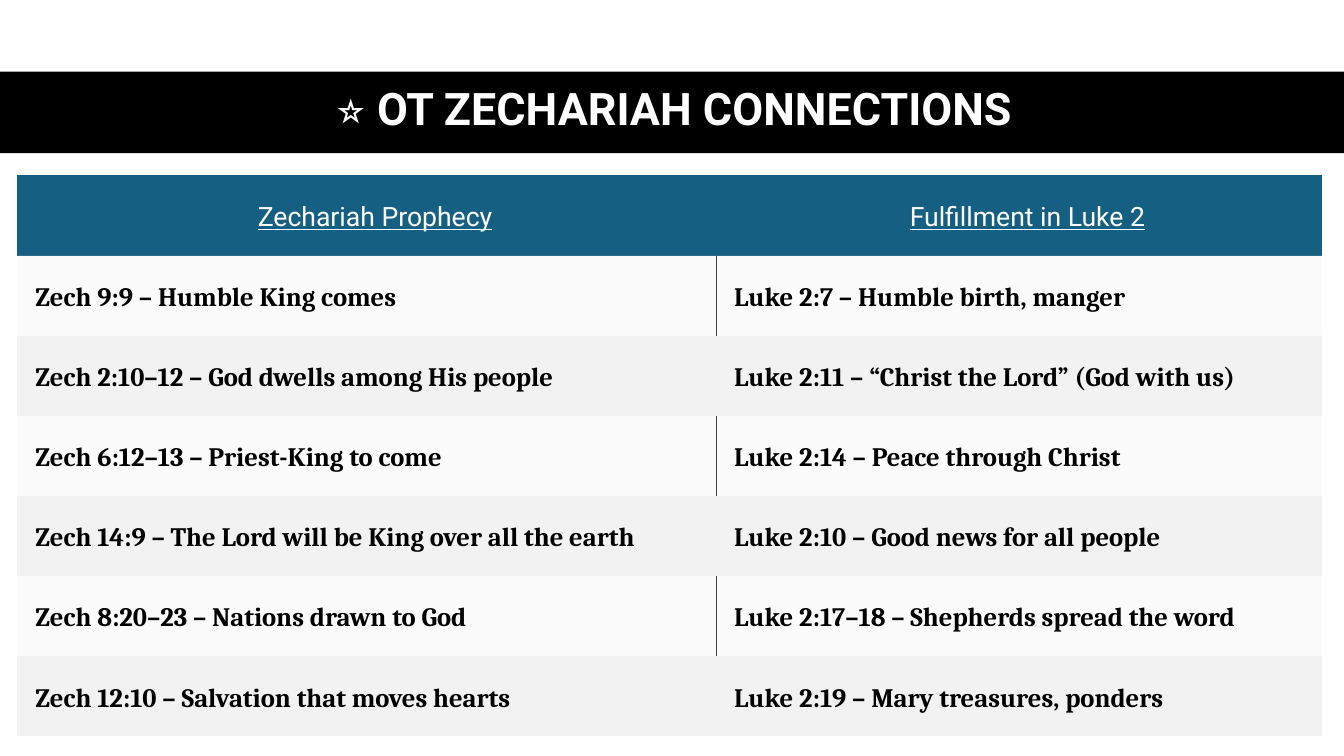
from lxml import etree
from pptx import Presentation
from pptx.dml.color import RGBColor
from pptx.enum.shapes import MSO_SHAPE
from pptx.enum.text import MSO_ANCHOR, MSO_AUTO_SIZE, PP_ALIGN
from pptx.oxml import parse_xml
from pptx.oxml.ns import qn
from pptx.util import Inches, Pt

RECT = MSO_SHAPE.RECTANGLE
MIDDLE = MSO_ANCHOR.MIDDLE
CENTER, LEFT = PP_ALIGN.CENTER, PP_ALIGN.LEFT
NO_FIT = MSO_AUTO_SIZE.NONE

TITLE_ONLY = 5
NO_STYLE = "{2D5ABB26-0587-4C30-8999-92F81FD0307C}"
A_NS = "http://schemas.openxmlformats.org/drawingml/2006/main"

HEADERS = ("Zechariah Prophecy", "Fulfillment in Luke 2")
CONNECTIONS = [
    ("Zech 9:9 – Humble King comes", "Luke 2:7 – Humble birth, manger"),
    ("Zech 2:10–12 – God dwells among His people",
     "Luke 2:11 – “Christ the Lord” (God with us)"),
    ("Zech 6:12–13 – Priest-King to come", "Luke 2:14 – Peace through Christ"),
    ("Zech 14:9 – The Lord will be King over all the earth",
     "Luke 2:10 – Good news for all people"),
    ("Zech 8:20–23 – Nations drawn to God",
     "Luke 2:17–18 – Shepherds spread the word"),
    ("Zech 12:10 – Salvation that moves hearts",
     "Luke 2:19 – Mary treasures, ponders"),
]


def rgb(value):
    return RGBColor.from_string(value)


class Deck:
    HEAD_FONT, BODY_FONT = "Roboto", "Cambria"
    BLACK, WHITE, BLUE = "000000", "FFFFFF", "156082"
    BAND, RULE = "F2F2F2", "404040"

    def __init__(self, prs):
        self.s = prs.slides.add_slide(prs.slide_layouts[TITLE_ONLY])

    def paragraph(self, p, text, size, font, color, align, spacing, after):
        p.text = text
        p.alignment, p.line_spacing = align, spacing
        p.space_before, p.space_after = Pt(0), Pt(after)
        p.font.size, p.font.name = Pt(size), font
        p.font.color.rgb = rgb(color)

    def bar(self, x, y, w, h):
        sp = self.s.shapes.add_shape(
            RECT, Inches(x), Inches(y), Inches(w), Inches(h))
        sp.shadow.inherit = False
        sp.fill.solid()
        sp.fill.fore_color.rgb = rgb(self.BLACK)
        sp.line.fill.background()
        # Keep the bar behind the title
        self.s.shapes.title.element.addprevious(sp.element)

    def title(self, text, x, y, w, h):
        sp = self.s.shapes.title
        sp.left, sp.top = Inches(x), Inches(y)
        sp.width, sp.height = Inches(w), Inches(h)
        tf = sp.text_frame
        tf.word_wrap, tf.auto_size = True, NO_FIT
        tf.vertical_anchor = MIDDLE
        p = tf.paragraphs[0]
        self.paragraph(p, text, 32, self.HEAD_FONT, self.WHITE, CENTER, 0.9, 6)
        p.font.bold = True

    def border(self, cell, side):
        cell._tc.get_or_add_tcPr().insert(0, parse_xml(
            f'<a:{side} xmlns:a="{A_NS}" w="{Pt(0.5)}"><a:solidFill>'
            f'<a:srgbClr val="{self.RULE}"/></a:solidFill></a:{side}>'))

    def cell(self, cell, text, row, col):
        header, light = row == 0, row % 2 == 1
        cell.vertical_anchor = MIDDLE
        cell.margin_left, cell.margin_right = Inches(0.18), Inches(0.01)
        cell.margin_top = cell.margin_bottom = Inches(0.14)
        cell.fill.solid()
        cell.fill.fore_color.rgb = rgb(self.BLUE if header else self.BAND)
        p = cell.text_frame.paragraphs[0]
        if header:
            self.paragraph(p, text, 19, self.HEAD_FONT, self.WHITE, CENTER, 1.15, 8)
            p.font.underline = True
        else:
            self.paragraph(p, text, 19, self.BODY_FONT, self.BLACK, LEFT, 1.15, 8)
            p.font.bold = True
        if light:
            # Lighter band with a rule between the columns
            color = cell._tc.tcPr.find(".//" + qn("a:srgbClr"))
            etree.SubElement(color, qn("a:alpha"), val="30000")
            self.border(cell, ("lnR", "lnL")[col])

    def table(self, rows, x, y, widths, row_h):
        frame = self.s.shapes.add_table(
            len(rows), len(widths), Inches(x), Inches(y),
            Inches(sum(widths)), Inches(row_h * len(rows)))
        frame.element.find(".//" + qn("a:tableStyleId")).text = NO_STYLE
        table = frame.table
        for column, width in zip(table.columns, widths):
            column.width = Inches(width)
        for r, texts in enumerate(rows):
            table.rows[r].height = Inches(row_h)
            for c, text in enumerate(texts):
                self.cell(table.cell(r, c), text, r, c)


def main():
    prs = Presentation()
    prs.slide_width, prs.slide_height = Inches(13.33), Inches(7.5)
    deck = Deck(prs)

    # Title band
    deck.bar(0, 0.71, 13.33, 0.81)
    deck.title("⭐ OT ZECHARIAH CONNECTIONS ", 0.61, 0.7, 12.26, 0.81)

    # Prophecies and their fulfillment
    deck.table([HEADERS] + CONNECTIONS, 0.17, 1.74, (6.93, 6.01), 0.795)

    prs.save("out.pptx")


if __name__ == "__main__":
    main()
